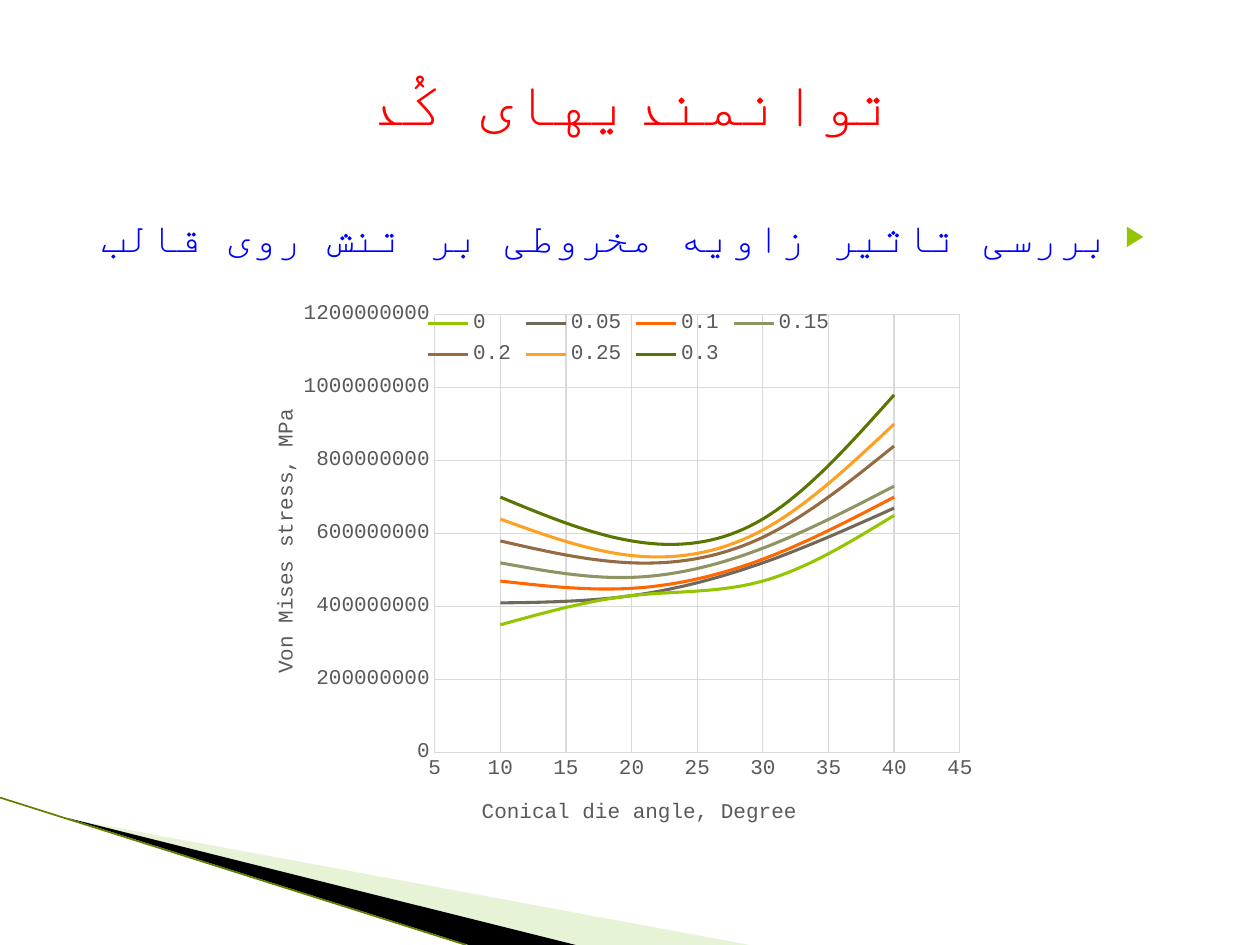
"""Build a slide on how the conical die angle affects the stress on the die."""
from lxml import etree
from pptx import Presentation
from pptx import util as u
from pptx.chart.data import XyChartData
from pptx.dml.color import RGBColor
from pptx.enum import chart as ch, shapes, text
from pptx.oxml.ns import qn

TITLE = "توانمندیهای کُد"
TOPIC = "بررسی تاثیر زاویه مخروطی بر تنش روی قالب"
ANGLES = (10, 20, 30, 40)
STRESS_IN_MILLIONS = {
    "0": (350, 430, 470, 650),
    "0.05": (410, 430, 520, 670),
    "0.1": (470, 450, 530, 700),
    "0.15": (520, 480, 560, 730),
    "0.2": (580, 520, 590, 840),
    "0.25": (640, 540, 610, 900),
    "0.3": (700, 580, 640, 980),
}
ANGLE_SCALE = ("Conical die angle, Degree", 5, 45, 5, (0.3, 0.93))
STRESS_SCALE = ("Von Mises stress, MPa", 0, 1.2e9, 2e8, (0.01, 0.2))
WEDGES = (
    ("C3E19D", 40, ((0.55, 6.5), (5.95, 7.5), (4.56, 7.5))),
    ("000000", 100, ((0.53, 6.49), (4.57, 7.5), (3.72, 7.5))),
)
THEME = {
    "font": "Courier New", "title_size": 36, "topic_size": 24, "chart_size": 12,
    "title": "FF0000", "topic": "0000FF", "bullet": "94C600", "edge": "5F7F00",
    "label": "595959", "grid": "D9D9D9",
    "series": ("94C600", "71685A", "FF6700", "909465", "956B43", "FEA022", "597700"),
}


def rgb(value):
    return RGBColor.from_string(value)


def add(parent, tag, **attributes):
    return etree.SubElement(parent, qn(tag), attributes)


def style(font, size, color, bold=False):
    font.name, font.size, font.bold = THEME["font"], u.Pt(size), bold
    font.color.rgb = rgb(color)


def place(holder, left, top, width, height):
    holder.left, holder.top = u.Inches(left), u.Inches(top)
    holder.width, holder.height = u.Inches(width), u.Inches(height)


def write(holder, wording, size, color, bullet=None):
    paragraph = holder.text_frame.paragraphs[0]
    paragraph.text = wording
    paragraph.alignment = text.PP_ALIGN.CENTER
    paragraph.space_before = u.Pt(0)
    properties = paragraph._p.get_or_add_pPr()
    properties.set("rtl", "1")
    if bullet:
        properties.set("marL", str(u.Inches(0.4)))
        properties.set("indent", str(u.Inches(-0.28)))
        add(add(properties, "a:buClr"), "a:srgbClr", val=THEME["bullet"])
        add(properties, "a:buSzPct", val="68000")
        add(properties, "a:buChar", char=bullet)
    style(paragraph.font, size, color, bold=True)
    add(properties.find(qn("a:defRPr")), "a:cs", typeface=THEME["font"])


def set_layout(element, index, inner=False, **fractions):
    for old in element.findall(qn("c:layout")):
        element.remove(old)
    layout = etree.Element(qn("c:layout"))
    element.insert(index, layout)
    manual = add(layout, "c:manualLayout")
    if inner:
        add(manual, "c:layoutTarget", val="inner")
    for mode in ("xMode", "yMode"):
        add(manual, f"c:{mode}", val="edge")
    for side, fraction in fractions.items():
        add(manual, f"c:{side}", val=str(fraction))


def format_axis(axis, scale):
    wording, axis.minimum_scale, axis.maximum_scale, axis.major_unit, (x, y) = scale
    axis.major_tick_mark = axis.minor_tick_mark = ch.XL_TICK_MARK.NONE
    axis.has_major_gridlines = True
    for line in (axis.format.line, axis.major_gridlines.format.line):
        line.color.rgb, line.width = rgb(THEME["grid"]), u.Pt(0.75)
    axis.tick_labels.number_format = "General"
    axis.tick_labels.number_format_is_linked = False
    style(axis.tick_labels.font, THEME["chart_size"], THEME["label"])
    caption = axis.axis_title.text_frame.paragraphs[0]
    caption.text = wording
    style(caption.font, THEME["chart_size"], THEME["label"])
    set_layout(axis.axis_title._element, 1, x=x, y=y)


def add_wedges(slide):
    for color, opacity, points in WEDGES:
        start, *rest = [(u.Inches(x), u.Inches(y)) for x, y in points]
        outline = slide.shapes.build_freeform(*start)
        outline.add_line_segments(rest)
        wedge = outline.convert_to_shape()
        wedge.shadow.inherit = False
        wedge.fill.solid()
        wedge.fill.fore_color.rgb = rgb(color)
        wedge.line.fill.background()
        if opacity < 100:
            tint = wedge._element.spPr.find(qn("a:solidFill"))[0]
            add(tint, "a:alpha", val=str(opacity * 1000))
    edge = slide.shapes.add_connector(
        shapes.MSO_CONNECTOR.STRAIGHT,
        u.Inches(0), u.Inches(6.33), u.Inches(3.7), u.Inches(7.5))
    edge.line.color.rgb, edge.line.width = rgb(THEME["edge"]), u.Pt(0.95)
    add(edge._element.spPr, "a:effectLst")


def add_stress_chart(slide):
    data = XyChartData()
    for friction, stresses in STRESS_IN_MILLIONS.items():
        curve = data.add_series(friction)
        for angle, stress in zip(ANGLES, stresses):
            curve.add_data_point(angle, stress * 1_000_000)
    chart = slide.shapes.add_chart(
        ch.XL_CHART_TYPE.XY_SCATTER_SMOOTH_NO_MARKERS,
        u.Inches(2.08), u.Inches(2.37), u.Inches(5.71), u.Inches(4.24), data).chart
    chart.has_title = False
    style(chart.font, 10, "000000")
    format_axis(chart.category_axis, ANGLE_SCALE)
    format_axis(chart.value_axis, STRESS_SCALE)
    chart.has_legend = True
    chart.legend.position = ch.XL_LEGEND_POSITION.TOP
    chart.legend.include_in_layout = True
    style(chart.legend.font, THEME["chart_size"], THEME["label"])
    set_layout(chart.legend._element, 1, x=0.22, y=0.01, w=0.58, h=0.13)
    plot_area = chart._chartSpace.chart.plotArea
    set_layout(plot_area, 0, inner=True, x=0.24, y=0.03, w=0.73, h=0.82)
    chart.plots[0].vary_by_categories = False
    for curve, color in zip(chart.plots[0].series, THEME["series"]):
        curve.format.line.color.rgb = rgb(color)
        curve.format.line.width = u.Pt(1.75)
        curve.marker.style = ch.XL_MARKER_STYLE.NONE
        curve._element.find(qn("c:smooth")).set("val", "1")


def main():
    deck = Presentation()
    deck.slide_width, deck.slide_height = u.Inches(10), u.Inches(7.5)
    slide = deck.slides.add_slide(deck.slide_layouts[1])
    add_wedges(slide)
    title, topic = slide.placeholders
    place(title, 0.5, 0.17, 9, 1.25)
    title.text_frame.vertical_anchor = text.MSO_ANCHOR.MIDDLE
    write(title, TITLE, THEME["title_size"], THEME["title"])
    place(topic, 0.5, 1.62, 9, 4.95)
    write(topic, TOPIC, THEME["topic_size"], THEME["topic"], bullet="▶")
    add_stress_chart(slide)
    deck.save("out.pptx")


if __name__ == "__main__":
    main()
